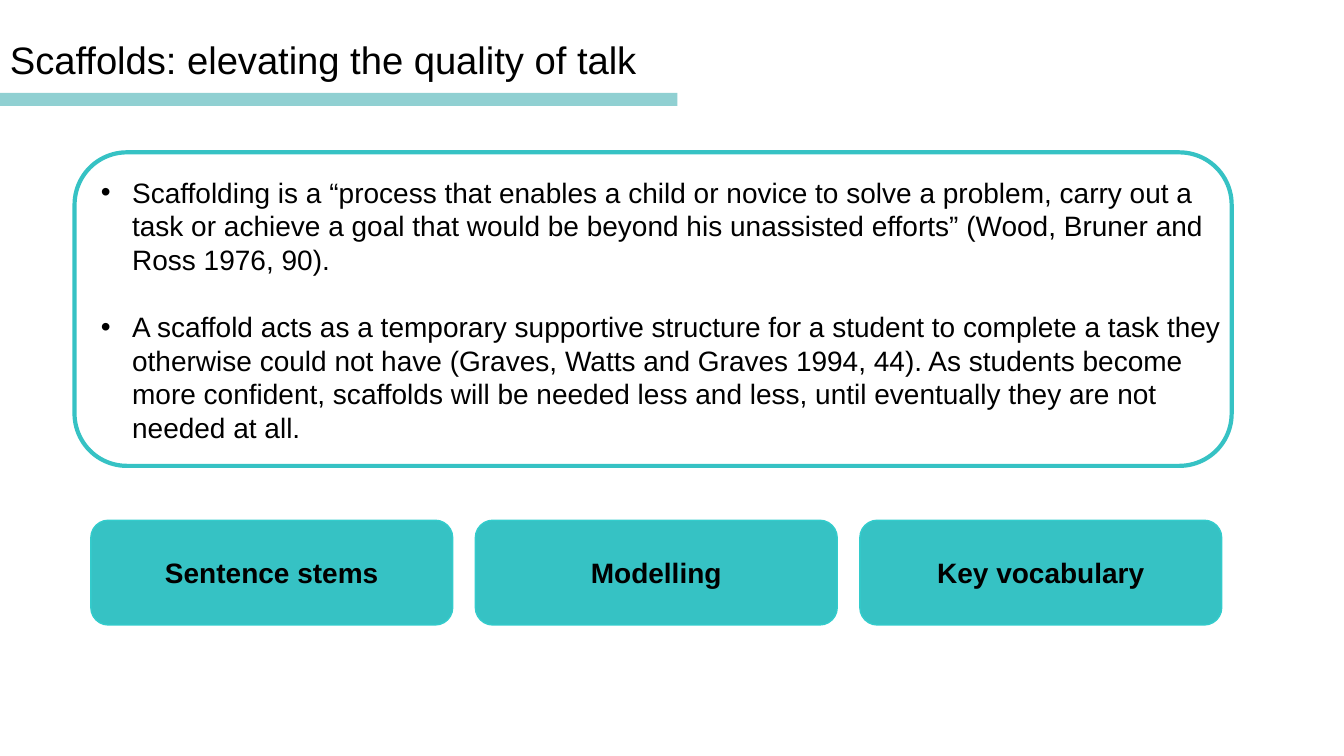
from dataclasses import dataclass

from lxml import etree
from pptx import Presentation
from pptx.dml.color import RGBColor
from pptx.enum.shapes import MSO_SHAPE
from pptx.enum.text import MSO_ANCHOR, PP_ALIGN
from pptx.oxml.ns import qn
from pptx.shapes.autoshape import Shape
from pptx.slide import Slide
from pptx.text.text import TextFrame, _Paragraph
from pptx.util import Cm, Pt

RECTANGLE = MSO_SHAPE.RECTANGLE
ROUNDED = MSO_SHAPE.ROUNDED_RECTANGLE
MIDDLE = MSO_ANCHOR.MIDDLE
CENTER = PP_ALIGN.CENTER

FONT = "Arial"
BLACK = "000000"
TEAL = "36C2C4"
BUTTON_EDGE = "33CCCC"
PALE_TEAL = "90D0D2"

TITLE = "Scaffolds: elevating the quality of talk"
DEFINITIONS = (
    "Scaffolding is a “process that enables a child or novice to solve a problem, "
    "carry out a task or achieve a goal that would be beyond his unassisted efforts” "
    "(Wood, Bruner and Ross 1976, 90).",
    "A scaffold acts as a temporary supportive structure for a student to complete a "
    "task they otherwise could not have (Graves, Watts and Graves 1994, 44). As students "
    "become more confident, scaffolds will be needed less and less, until eventually "
    "they are not needed at all.",
)
SCAFFOLD_TYPES = ("Sentence stems", "Modelling", "Key vocabulary")


@dataclass(frozen=True)
class Box:
    """Position and size in centimetres."""
    left: float
    top: float
    width: float
    height: float

    def lengths(self) -> tuple[Cm, Cm, Cm, Cm]:
        return Cm(self.left), Cm(self.top), Cm(self.width), Cm(self.height)


TITLE_BOX = Box(0, 0.71, 24.61, 1.73)
UNDERLINE_BOX = Box(0, 2.34, 17.07, 0.33)
DEFINITIONS_BOX = Box(2.29, 4.29, 29.08, 7.95)
FRAME_BOX = Box(1.88, 3.84, 29.16, 7.9)
FIRST_BUTTON = Box(2.29, 13.11, 9.12, 2.64)
BUTTON_PITCH = 9.69


def color(value: str) -> RGBColor:
    return RGBColor.from_string(value)


def add_run(paragraph: _Paragraph, text: str, size: float, bold: bool = False) -> None:
    run = paragraph.add_run()
    run.text = text
    run.font.name = FONT
    run.font.size = Pt(size)
    run.font.bold = bold
    run.font.color.rgb = color(BLACK)


def add_bullet(paragraph: _Paragraph, indent: float) -> None:
    properties = paragraph._p.get_or_add_pPr()
    properties.set("marL", str(Cm(indent)))
    properties.set("indent", str(-Cm(indent)))
    etree.SubElement(properties, qn("a:buFont")).set("typeface", FONT)
    etree.SubElement(properties, qn("a:buChar")).set("char", "•")


def add_text_box(slide: Slide, box: Box) -> TextFrame:
    frame = slide.shapes.add_textbox(*box.lengths()).text_frame
    frame.word_wrap = True
    return frame


def add_panel(slide: Slide, kind: MSO_SHAPE, box: Box, fill: str | None = None,
              line: str | None = None, line_width: float = 1) -> Shape:
    shape = slide.shapes.add_shape(kind, *box.lengths())
    shape.shadow.inherit = False
    if fill:
        shape.fill.solid()
        shape.fill.fore_color.rgb = color(fill)
    else:
        shape.fill.background()
    if line:
        shape.line.color.rgb = color(line)
        shape.line.width = Pt(line_width)
    else:
        shape.line.fill.background()
    return shape


def add_title(slide: Slide) -> None:
    frame = add_text_box(slide, TITLE_BOX)
    frame.vertical_anchor = MIDDLE
    paragraph = frame.paragraphs[0]
    paragraph.line_spacing = 0.9
    add_run(paragraph, TITLE, 27.3)
    add_panel(slide, RECTANGLE, UNDERLINE_BOX, fill=PALE_TEAL)


def add_definitions(slide: Slide) -> None:
    frame = add_text_box(slide, DEFINITIONS_BOX)
    for index, definition in enumerate(DEFINITIONS):
        paragraph = frame.add_paragraph() if index else frame.paragraphs[0]
        if index:
            paragraph.space_before = Pt(24)
        add_bullet(paragraph, 0.79)
        add_run(paragraph, definition, 20)
    add_panel(slide, ROUNDED, FRAME_BOX, line=TEAL, line_width=3)


def add_buttons(slide: Slide) -> None:
    first = FIRST_BUTTON
    for index, label in enumerate(SCAFFOLD_TYPES):
        box = Box(first.left + index * BUTTON_PITCH, first.top, first.width, first.height)
        frame = add_panel(slide, ROUNDED, box, TEAL, BUTTON_EDGE).text_frame
        frame.word_wrap = True
        frame.vertical_anchor = MIDDLE
        paragraph = frame.paragraphs[0]
        paragraph.alignment = CENTER
        add_run(paragraph, label, 20, bold=True)


def main() -> None:
    presentation = Presentation()
    presentation.slide_width = Cm(33.87)
    presentation.slide_height = Cm(19.05)
    slide = presentation.slides.add_slide(presentation.slide_layouts[6])
    add_title(slide)
    add_definitions(slide)
    add_buttons(slide)
    presentation.save("out.pptx")


if __name__ == "__main__":
    main()
